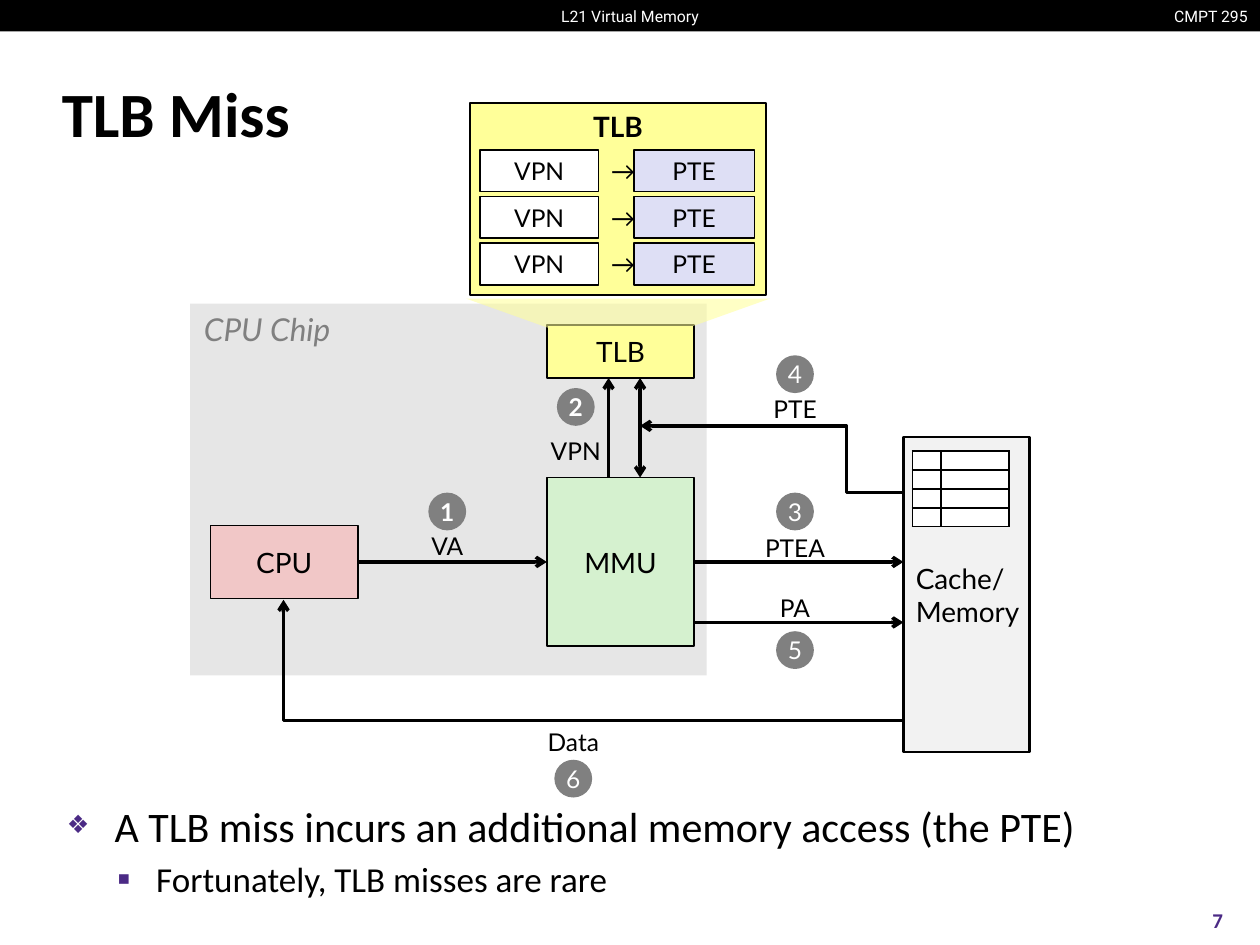
from dataclasses import dataclass

from lxml.etree import SubElement
from pptx import Presentation
from pptx.dml.color import RGBColor
from pptx.enum.shapes import MSO_CONNECTOR, MSO_SHAPE
from pptx.enum.text import MSO_ANCHOR, MSO_AUTO_SIZE, PP_ALIGN
from pptx.oxml.ns import qn
from pptx.util import Inches, Pt


@dataclass(frozen=True)
class Theme:
    """Colours, fonts and type sizes of the slide."""
    black: str = "000000"
    white: str = "FFFFFF"
    accent: str = "4B2A85"
    grey: str = "808080"
    chip: str = "E6E6E6"
    green: str = "D5F1CF"
    red: str = "F1C7C7"
    memory: str = "F2F2F2"
    yellow: str = "FFFF99"
    lilac: str = "DEDFF5"
    text_font: str = "Calibri"
    diagram_font: str = "Lato"
    header_font: str = "Roboto"
    title_size: int = 36
    body_size: int = 24
    detail_size: int = 20
    chip_size: int = 18
    block_size: int = 16
    label_size: int = 14
    number_size: int = 12
    header_size: int = 9
    cell_size: int = 5


THEME = Theme()


@dataclass(frozen=True)
class Box:
    """A rectangle in inches."""
    left: float
    top: float
    width: float
    height: float

    def inner(self, left, top, width, height):
        """Return a box placed relative to this one."""
        return Box(self.left + left, self.top + top, width, height)

    def lengths(self):
        """Return the position and size as lengths."""
        return [Inches(value) for value in (self.left, self.top, self.width, self.height)]


def color(value):
    """Turn a hexadecimal value into a colour."""
    return RGBColor.from_string(value)


def add_run(paragraph, text, size, font=THEME.diagram_font, fill=THEME.black, bold=False, italic=False):
    """Add one formatted run."""
    run = paragraph.add_run()
    run.text = text
    run.font.name, run.font.size = font, Pt(size)
    run.font.bold, run.font.italic = bold, italic
    run.font.color.rgb = color(fill)


def write(shape, text, size, align=PP_ALIGN.CENTER, anchor=MSO_ANCHOR.MIDDLE, **style):
    """Write the lines of a text into a shape."""
    frame = shape.text_frame
    frame.word_wrap = False
    frame.vertical_anchor = anchor
    for index, line in enumerate(text.split("\n")):
        paragraph = frame.add_paragraph() if index else frame.paragraphs[0]
        paragraph.alignment = align
        add_run(paragraph, line, size, **style)


def add_label(slide, box, text, size=THEME.label_size, **style):
    """Add a text box."""
    write(slide.shapes.add_textbox(*box.lengths()), text, size, **style)


def add_block(slide, box, fill, kind=MSO_SHAPE.RECTANGLE, line_width=0):
    """Add a filled shape, outlined if a line width is given."""
    shape = slide.shapes.add_shape(kind, *box.lengths())
    shape.shadow.inherit = False
    shape.fill.solid()
    shape.fill.fore_color.rgb = color(fill)
    if line_width:
        shape.line.color.rgb = color(THEME.black)
        shape.line.width = Pt(line_width)
    else:
        shape.line.fill.background()
    return shape


def add_arrow(slide, box, kind=MSO_CONNECTOR.STRAIGHT, ends=("tailEnd",)):
    """Add a connector from the start of a box to its far corner."""
    left, top, width, height = box.lengths()
    connector = slide.shapes.add_connector(kind, left, top, left + width, top + height)
    connector.line.color.rgb = color(THEME.black)
    connector.line.width = Pt(2)
    line = connector.line._get_or_add_ln()
    for end in ends:
        SubElement(line, qn(f"a:{end}"), type="arrow")
    SubElement(connector.element.spPr, qn("a:effectLst"))
    return connector


def add_elbow(slide, box, preset, bend=None):
    """Add a bent arrow running from the bottom right to the top left of a box."""
    properties = add_arrow(slide, box, MSO_CONNECTOR.ELBOW).element.spPr
    properties.find(qn("a:xfrm")).set("rot", "10800000")
    geometry = properties.find(qn("a:prstGeom"))
    geometry.set("prst", preset)
    if bend is not None:
        SubElement(geometry.find(qn("a:avLst")), qn("a:gd"), name="adj1", fmla=f"val {bend}")


def add_header(slide, box):
    """Draw the course strip."""
    add_block(slide, box, THEME.black)
    style = dict(font=THEME.header_font, fill=THEME.white)
    add_label(slide, box.inner(9.19, 0, 0.81, box.height), "CMPT 295", THEME.header_size, align=PP_ALIGN.RIGHT, **style)
    add_label(slide, box.inner(4.35, 0, 1.3, box.height), "L21 Virtual Memory", THEME.header_size, **style)


def place(placeholder, box, anchor):
    """Move a placeholder into a box and return its text frame."""
    placeholder.left, placeholder.top, placeholder.width, placeholder.height = box.lengths()
    frame = placeholder.text_frame
    frame.auto_size = MSO_AUTO_SIZE.NONE
    frame.word_wrap = True
    frame.vertical_anchor = anchor
    return frame


def add_title(slide, box):
    """Fill the title placeholder."""
    paragraph = place(slide.shapes.title, box, MSO_ANCHOR.MIDDLE).paragraphs[0]
    paragraph.alignment = PP_ALIGN.LEFT
    add_run(paragraph, "TLB Miss", THEME.title_size, THEME.text_font, bold=True)


def add_bullets(slide, box):
    """Fill the body placeholder with the two-level list."""
    frame = place(slide.placeholders[1], box, MSO_ANCHOR.TOP)
    items = (("A TLB miss incurs an additional memory access (the PTE)", THEME.body_size, 0.38, 0.38, "❖", 60, 0),
             ("Fortunately, TLB misses are rare", THEME.detail_size, 0.71, 0.31, "▪", 110, 4))
    for level, (text, size, margin, hanging, bullet, percent, space) in enumerate(items):
        paragraph = frame.add_paragraph() if level else frame.paragraphs[0]
        paragraph.level = level
        paragraph.space_before = Pt(space)
        properties = paragraph._p.get_or_add_pPr()
        properties.set("marL", str(Inches(margin)))
        properties.set("indent", str(-Inches(hanging)))
        SubElement(SubElement(properties, qn("a:buClr")), qn("a:srgbClr"), val=THEME.accent)
        SubElement(properties, qn("a:buSzPct"), val=str(percent * 1000))
        SubElement(properties, qn("a:buChar"), char=bullet)
        add_run(paragraph, text, size, THEME.text_font)


def add_page_table(slide, box):
    """Add the empty page table held in memory."""
    table = slide.shapes.add_table(4, 2, *box.lengths()).table
    table.first_row = table.horz_banding = False
    for column, width in zip(table.columns, (0.23, 0.54)):
        column.width = Inches(width)
    for cell in table.iter_cells():
        cell.margin_left = cell.margin_right = cell.margin_top = cell.margin_bottom = 0
        for side in ("lnL", "lnR", "lnT", "lnB"):
            border = SubElement(cell._tc.get_or_add_tcPr(), qn(f"a:{side}"), w=str(Pt(1)))
            SubElement(SubElement(border, qn("a:solidFill")), qn("a:srgbClr"), val=THEME.black)
        cell.fill.solid()
        cell.fill.fore_color.rgb = color(THEME.white)
        SubElement(cell.text_frame.paragraphs[0]._p, qn("a:endParaRPr"), sz=str(THEME.cell_size * 100))


def add_translation_diagram(slide, box):
    """Draw the chip, the memory and the numbered steps between them."""
    add_block(slide, box.inner(0, 0, 4.1, 2.95), THEME.chip)
    add_label(slide, box.inner(0.01, 0, 1.23, 0.4), "CPU Chip", THEME.chip_size,
              align=PP_ALIGN.LEFT, anchor=MSO_ANCHOR.TOP, fill=THEME.grey, italic=True)
    blocks = {}
    for name, area, fill in (("MMU", (2.83, 1.38, 1.17, 1.34), THEME.green),
                             ("CPU", (0.16, 1.76, 1.17, 0.58), THEME.red),
                             ("TLB", (2.83, 0.17, 1.17, 0.42), THEME.yellow)):
        blocks[name] = add_block(slide, box.inner(*area), fill, line_width=1)
        write(blocks[name], name, THEME.block_size)
    memory = add_block(slide, box.inner(5.66, 1.06, 1, 2.5), THEME.memory, line_width=1.5)
    write(memory, "Cache/\nMemory", THEME.block_size, align=PP_ALIGN.LEFT)
    add_page_table(slide, box.inner(5.73, 1.17, 0.77, 0.6))

    address = add_arrow(slide, box.inner(1.33, 2.05, 1.5, 0))
    address.begin_connect(blocks["CPU"], 3)
    address.end_connect(blocks["MMU"], 1)
    add_arrow(slide, box.inner(4, 2.05, 1.66, 0)).begin_connect(blocks["MMU"], 3)
    add_arrow(slide, box.inner(4, 2.53, 1.66, 0))
    add_arrow(slide, box.inner(3.32, 1.38, 0, -0.79))
    add_arrow(slide, box.inner(3.57, 0.59, 0, 0.79), ends=("headEnd", "tailEnd"))
    add_elbow(slide, box.inner(0.74, 2.35, 4.92, 0.96), "bentConnector2")
    add_elbow(slide, box.inner(3.57, 0.97, 2.09, 0.53), "bentConnector3", 21600)

    steps = (("VA", 0.47, 2.04, 1.93, 1.65), ("VPN", 0.61, 3.06, 1.17, 0.82), ("PTEA", 0.69, 4.8, 1.94, 1.65),
             ("PTE", 0.55, 4.8, 0.84, 0.56), ("PA", 0.46, 4.8, 2.42, 2.75), ("Data", 0.62, 3.04, 3.48, 3.77))
    for number, (name, width, center, label_middle, badge_middle) in enumerate(steps, 1):
        add_label(slide, box.inner(center - width / 2, label_middle - 0.17, width, 0.33), name)
        badge = add_block(slide, box.inner(center - 0.15, badge_middle - 0.15, 0.3, 0.3), THEME.grey, MSO_SHAPE.OVAL)
        write(badge, str(number), THEME.label_size, fill=THEME.white, bold=number < 3)


def add_buffer_callout(slide, box):
    """Draw the enlarged TLB with its entries."""
    beam = add_block(slide, box.inner(0, 1.55, box.width, 0.23), THEME.yellow, MSO_SHAPE.TRAPEZOID)
    beam.rotation = 180
    beam.adjustments[0] = 2.8
    SubElement(beam.element.spPr.find(f".//{qn('a:srgbClr')}"), qn("a:alpha"), val="56000")
    panel = add_block(slide, box.inner(0.03, 0, 2.35, 1.52), THEME.yellow, line_width=1)
    write(panel, "TLB", THEME.block_size, anchor=MSO_ANCHOR.TOP, bold=True)
    for row in range(3):
        top = 0.37 + 0.37 * row
        for text, left, width, fill in (("VPN", 0.11, 0.94, THEME.white), ("PTE", 1.33, 0.96, THEME.lilac)):
            entry = add_block(slide, box.inner(left, top, width, 0.33), fill, line_width=1)
            write(entry, text, THEME.label_size)
        add_label(slide, box.inner(1.05, top, 0.28, 0.33), "→")


def main():
    """Build and save the slide."""
    presentation = Presentation()
    presentation.slide_width, presentation.slide_height = Inches(10), Inches(7.5)
    slide = presentation.slides.add_slide(presentation.slide_layouts[1])
    add_header(slide, Box(0, 0, 10, 0.25))
    add_title(slide, Box(0.39, 0.48, 9.19, 0.83))
    add_bullets(slide, Box(0.43, 6.3, 9.15, 1))
    add_label(slide, Box(9.33, 7.1, 0.67, 0.4), "7", THEME.number_size,
              font=THEME.text_font, fill=THEME.accent, bold=True)
    add_translation_diagram(slide, Box(1.51, 2.41, 6.66, 3.92))
    add_buffer_callout(slide, Box(3.7, 0.82, 2.41, 1.78))
    presentation.save("out.pptx")


if __name__ == "__main__":
    main()
